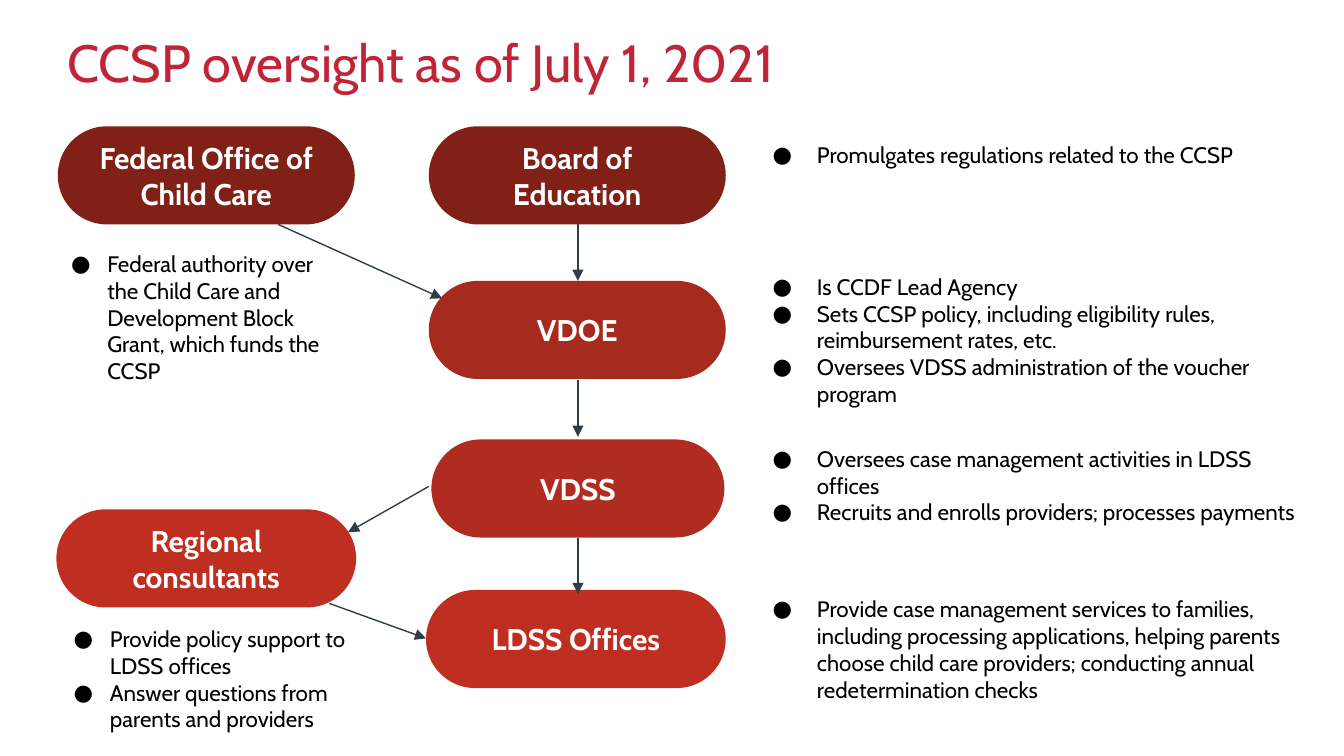
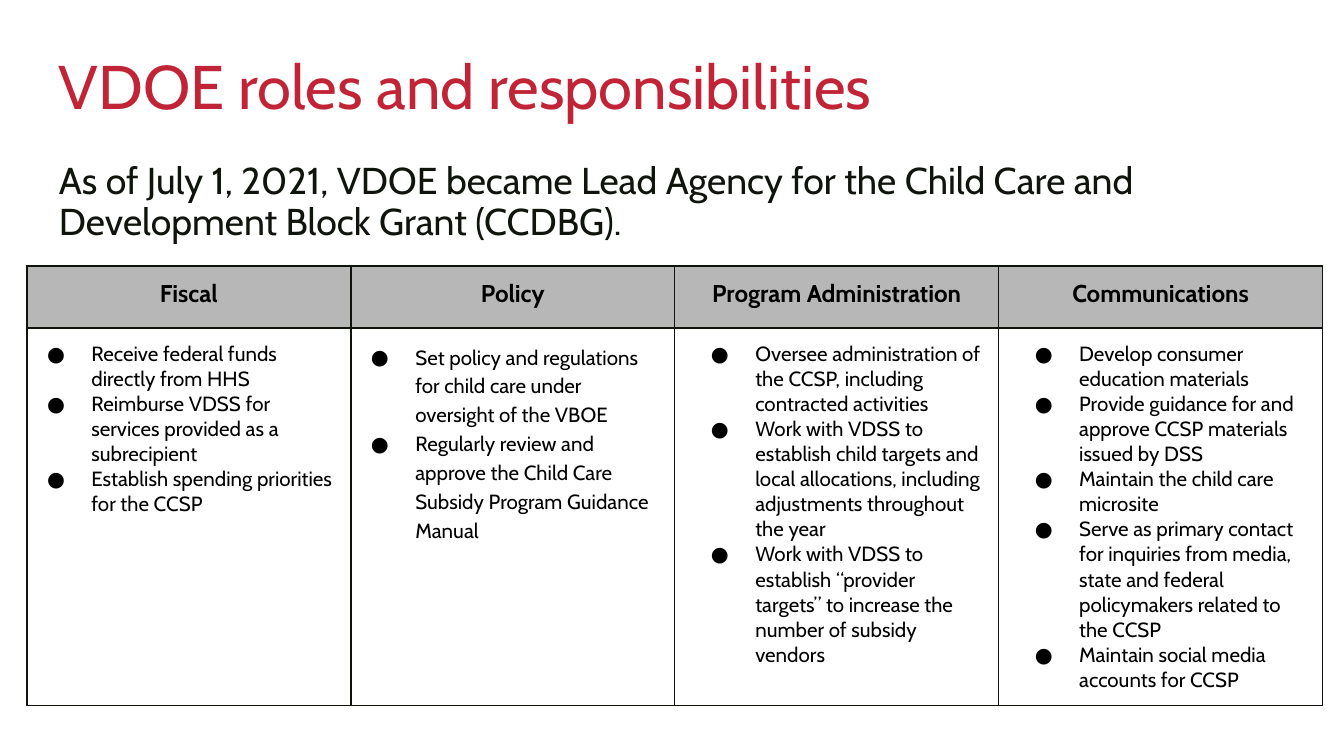
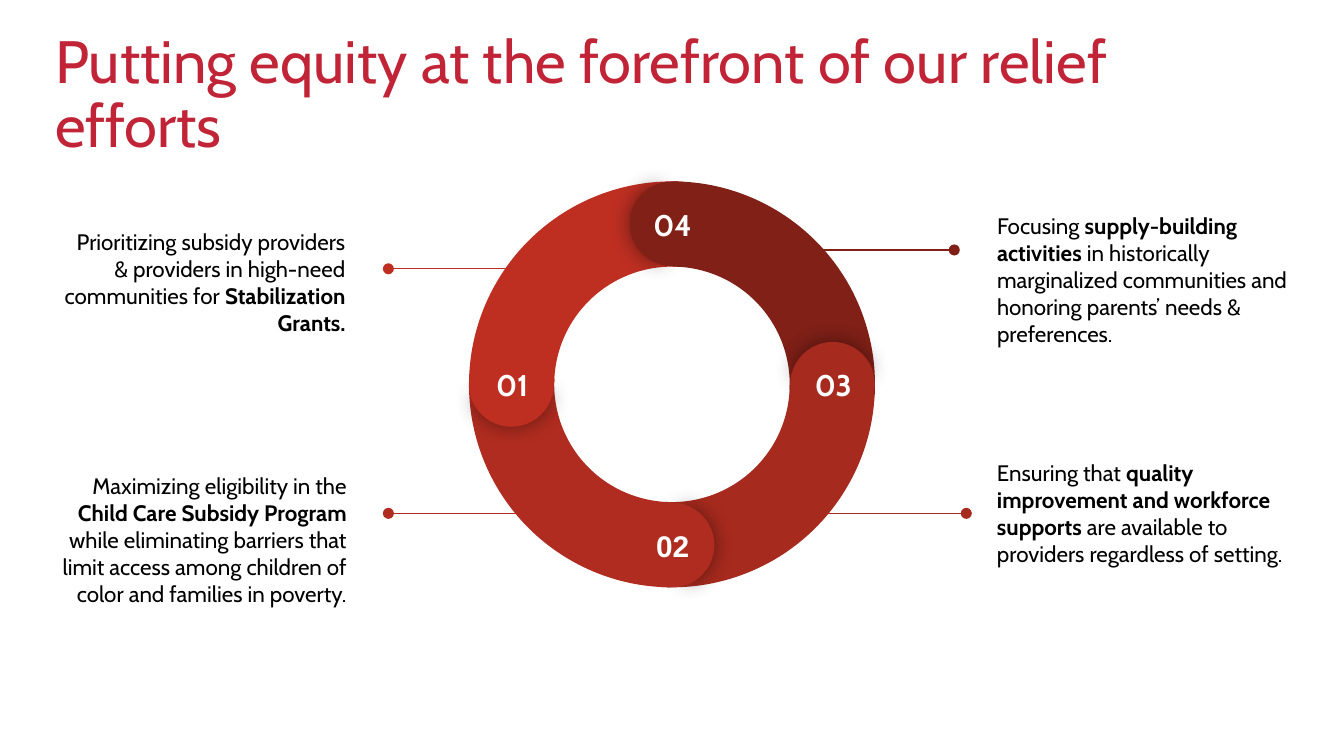
from math import cos, radians, sin

from lxml import etree
from pptx import Presentation
from pptx.dml.color import RGBColor
from pptx.enum.shapes import MSO_CONNECTOR, MSO_SHAPE
from pptx.enum.text import MSO_ANCHOR, PP_ALIGN
from pptx.oxml.ns import qn
from pptx.util import Inches, Pt

LEFT, CENTER, RIGHT = PP_ALIGN.LEFT, PP_ALIGN.CENTER, PP_ALIGN.RIGHT
TOP, MIDDLE = MSO_ANCHOR.TOP, MSO_ANCHOR.MIDDLE
ROUND_RECT, BLOCK_ARC, PIE = MSO_SHAPE.ROUNDED_RECTANGLE, MSO_SHAPE.BLOCK_ARC, MSO_SHAPE.PIE
STRAIGHT = MSO_CONNECTOR.STRAIGHT

FONT = "Cabin"
WHITE = RGBColor(0xFF, 0xFF, 0xFF)
BLACK = RGBColor(0x00, 0x00, 0x00)
INK = RGBColor(0x0F, 0x15, 0x0D)
SLATE = RGBColor(0x2F, 0x3E, 0x46)
GRAY = RGBColor(0xB7, 0xB7, 0xB7)
CRIMSON = RGBColor(0xC1, 0x24, 0x36)
MAROON = RGBColor(0x80, 0x20, 0x17)
BRICK = RGBColor(0xA7, 0x2A, 0x1E)
RUST = RGBColor(0xB0, 0x2C, 0x20)
SCARLET = RGBColor(0xBE, 0x2F, 0x22)


def add_child(parent, tag, **attributes):
    return etree.SubElement(parent, qn(tag), attributes)


def add_bullet(para, margin, hanging):
    properties = para._p.get_or_add_pPr()
    properties.set("marL", str(Inches(margin)))
    properties.set("indent", str(-Inches(hanging)))
    color = add_child(properties, "a:buClr")
    add_child(color, "a:srgbClr", val=str(BLACK))
    add_child(properties, "a:buFont", typeface=FONT)
    add_child(properties, "a:buChar", char="●")


def write(frame, paras, size, color=BLACK, bold=False, align=LEFT, bullet=None,
          spacing=None, font=FONT):
    """Fill a text frame; each para is a string or a list of (text, bold) spans."""
    frame.word_wrap = True
    for index, spans in enumerate(paras):
        para = frame.add_paragraph() if index else frame.paragraphs[0]
        if bullet:
            add_bullet(para, *bullet)
        para.alignment = align
        if spacing:
            para.line_spacing = spacing
        for text, is_bold in [(spans, bold)] if isinstance(spans, str) else spans:
            span = para.add_run()
            span.text = text
            span.font.name = font
            span.font.size = Pt(size)
            span.font.bold = is_bold
            span.font.color.rgb = color


def set_margins(holder, side, end):
    holder.margin_left = holder.margin_right = Inches(side)
    holder.margin_top = holder.margin_bottom = Inches(end)


def add_text(page, box, paras, size, anchor=TOP, margins=(0.1, 0.1), **style):
    frame = page.shapes.add_textbox(*map(Inches, box)).text_frame
    set_margins(frame, *margins)
    frame.vertical_anchor = anchor
    write(frame, paras, size, **style)


def add_title(page, box, text, size, **layout):
    add_text(page, box, [text], size, color=CRIMSON, spacing=0.9, **layout)


def add_solid(page, kind, box, fill, adjustments, rotation=0):
    shape = page.shapes.add_shape(kind, *map(Inches, box))
    shape.shadow.inherit = False
    shape.fill.solid()
    shape.fill.fore_color.rgb = fill
    shape.line.fill.background()
    for index, value in enumerate(adjustments):
        shape.adjustments[index] = value
    shape.rotation = rotation
    return shape


def add_line(page, start, end, color, tail):
    line = page.shapes.add_connector(STRAIGHT, *map(Inches, start + end))
    line.line.color.rgb = color
    line.line.width = Pt(0.75)
    properties = line._element.spPr
    add_child(properties.find(qn("a:ln")), "a:tailEnd", type=tail)
    add_child(properties, "a:effectLst")


def add_pill(page, box, text, fill):
    pill = add_solid(page, ROUND_RECT, box, fill, [0.5])
    set_margins(pill.text_frame, 0.1, 0.1)
    pill.text_frame.vertical_anchor = MIDDLE
    write(pill.text_frame, [text], 16, color=WHITE, bold=True, align=CENTER)


def build_oversight(page):
    add_title(page, (0.43, 0.15, 7.86, 0.67), "CCSP oversight as of July 1, 2021", 28,
              anchor=MIDDLE, margins=(0.07, 0.04))

    pill_height, spine = 0.73, 4.3
    for left, top, width, text, fill in [
        (3.19, 0.94, 2.21, "Board of Education", MAROON),
        (3.19, 2.09, 2.21, "VDOE", BRICK),
        (3.21, 3.27, 2.18, "VDSS", RUST),
        (3.17, 4.39, 2.23, "LDSS Offices", SCARLET),
        (0.42, 3.79, 2.23, "Regional consultants", SCARLET),
        (0.43, 0.94, 2.21, "Federal Office of Child Care", MAROON),
    ]:
        add_pill(page, (left, top, width, pill_height), text, fill)

    arrows = [((spine, top), (spine, top + 0.42)) for top in (1.67, 2.83, 4)]
    arrows += [((2.45, 4.49), (3.17, 4.75)), ((3.19, 3.62), (2.59, 3.96)),
               ((2.07, 1.67), (3.29, 2.22))]
    for start, end in arrows:
        add_line(page, start, end, SLATE, "triangle")

    wide, narrow = (0.5, 0.33), (0.38, 0.27)
    for left, top, width, bullet, duties in [
        (5.48, 0.95, 3.81, wide, ["Promulgates regulations related to the CCSP"]),
        (5.48, 1.93, 4.41, wide, [
            "Is CCDF Lead Agency",
            "Sets CCSP policy, including eligibility rules, reimbursement rates, etc.",
            "Oversees VDSS administration of the voucher program"]),
        (5.48, 3.21, 4.41, wide, [
            "Oversees case management activities in LDSS offices",
            "Recruits and enrolls providers; processes payments"]),
        (5.48, 4.33, 4.41, wide, [
            "Provide case management services to families, including processing "
            "applications, helping parents choose child care providers; conducting "
            "annual redetermination checks"]),
        (0.32, 1.76, 2.21, narrow, [
            "Federal authority over the Child Care and Development Block Grant, "
            "which funds the CCSP"]),
        (0.34, 4.55, 2.67, narrow, [
            "Provide policy support to LDSS offices",
            "Answer questions from parents and providers"]),
    ]:
        add_text(page, (left, top, width, 0.64), duties, 12, bullet=bullet)


def set_borders(cell):
    properties = cell._tc.get_or_add_tcPr()
    for index, side in enumerate(("a:lnL", "a:lnR", "a:lnT", "a:lnB")):
        border = etree.Element(qn(side), w=str(Pt(1)))
        add_child(add_child(border, "a:solidFill"), "a:srgbClr", val=str(INK))
        properties.insert(index, border)


def add_roles_table(page, left, top, column_width, row_heights, columns):
    """Each column is (heading, bullet margin, line spacing, roles)."""
    table = page.shapes.add_table(
        2, len(columns), Inches(left), Inches(top),
        Inches(column_width * len(columns)), Inches(sum(row_heights))).table
    table.first_row = table.horz_banding = False
    for row, height in zip(table.rows, row_heights):
        row.height = Inches(height)
    for index, (heading, margin, spacing, roles) in enumerate(columns):
        table.columns[index].width = Inches(column_width)
        header, body = table.cell(0, index), table.cell(1, index)
        header.fill.solid()
        header.fill.fore_color.rgb = GRAY
        body.fill.background()
        for cell in (header, body):
            set_margins(cell, 0.1, 0.1)
            set_borders(cell)
        write(header.text_frame, [heading], 13, bold=True, align=CENTER)
        write(body.text_frame, roles, 11, bullet=(margin, 0.33), spacing=spacing)


def build_roles(page):
    add_title(page, (0.34, 0.32, 9.32, 0.63), "VDOE roles and responsibilities", 33)
    add_text(page, (0.34, 1.11, 9.32, 0.98), [
        "As of July 1, 2021, VDOE became Lead Agency for the Child Care and "
        "Development Block Grant (CCDBG)."], 20, color=INK, spacing=0.9)
    add_roles_table(page, 0.2, 1.98, 2.41, (0.46, 2.81), [
        ("Fiscal", 0.38, None, [
            "Receive federal funds directly from HHS",
            "Reimburse VDSS for services provided as a subrecipient",
            "Establish spending priorities for the CCSP"]),
        ("Policy", 0.38, 1.15, [
            "Set policy and regulations for child care under oversight of the VBOE",
            "Regularly review and approve the Child Care Subsidy Program Guidance Manual"]),
        ("Program Administration", 0.5, None, [
            "Oversee administration of the CCSP, including contracted activities",
            "Work with VDSS to establish child targets and local allocations, "
            "including adjustments throughout the year",
            "Work with VDSS to establish “provider targets” to increase the number "
            "of subsidy vendors"]),
        ("Communications", 0.5, None, [
            "Develop consumer education materials",
            "Provide guidance for and approve CCSP materials issued by DSS",
            "Maintain the child care microsite",
            "Serve as primary contact for inquiries from media, state and federal "
            "policymakers related to the CCSP",
            "Maintain social media accounts for CCSP"]),
    ])


def add_glow(shape):
    """Give the shape a soft dark shadow on all sides."""
    effects = shape._element.spPr.find(qn("a:effectLst"))
    shadow = add_child(effects, "a:outerShdw", blurRad=str(Pt(11.2)), dist="0", dir="0",
                       algn="ctr", rotWithShape="0")
    color = add_child(shadow, "a:srgbClr", val=str(BLACK))
    add_child(color, "a:alpha", val="43000")


def add_ring(page, left, top, size, quarters):
    """Each quarter is (number, angle of its rounded cap, fill, font)."""
    band = 0.63
    middle_radius = (size - band) / 2
    for _, angle, fill, _ in quarters:
        add_solid(page, BLOCK_ARC, (left, top, size, size), fill,
                  (126.22, 181.77, 0.21), (angle + 150) % 360)
    for number, angle, fill, font in quarters:
        center_x = left + size / 2 + middle_radius * cos(radians(angle))
        center_y = top + size / 2 + middle_radius * sin(radians(angle))
        cap = (center_x - band / 2, center_y - band / 2, band, band)
        add_glow(add_solid(page, PIE, cap, fill, (61.9, 149.96), (angle + 90.7) % 360))
        add_solid(page, PIE, cap, fill, (40.28, 171.84), (angle + 270) % 360)
        add_text(page, (center_x - 0.27, center_y - 0.23, 0.55, 0.29), [number], 16,
                 color=WHITE, bold=True, align=CENTER, font=font)


def build_equity(page):
    add_title(page, (0.34, 0.4, 9.2, 0.63),
              "Putting equity at the forefront of our relief efforts", 32,
              anchor=MIDDLE, margins=(0.07, 0.04))
    add_ring(page, 3.49, 1.35, 3.02, [
        ("03", 0, BRICK, FONT),
        ("02", 90, RUST, "Arial"),
        ("01", 180, SCARLET, FONT),
        ("04", 270, MAROON, FONT),
    ])
    for box, align, line_from, line_to, line_y, color, spans in [
        ((0.35, 1.28, 2.32, 1.64), RIGHT, 4.03, 2.89, 2, SCARLET, [
            ("Prioritizing subsidy providers & providers in high-need communities for ",
             False),
            ("Stabilization Grants.", True)]),
        ((0.26, 3.01, 2.42, 2.01), RIGHT, 4.32, 2.89, 3.82, RUST, [
            ("Maximizing eligibility in the ", False),
            ("Child Care Subsidy Program ", True),
            ("while eliminating barriers that limit access among children of color "
             "and families in poverty.", False)]),
        ((7.32, 1.26, 2.58, 1.64), LEFT, 5.7, 7.1, 1.86, MAROON, [
            ("Focusing ", False),
            ("supply-building activities", True),
            (" in historically marginalized communities and honoring parents’ needs "
             "& preferences.", False)]),
        ((7.32, 3.09, 2.44, 1.45), LEFT, 5.78, 7.19, 3.82, BRICK, [
            ("Ensuring that", False),
            (" quality improvement and workforce supports ", True),
            ("are available to providers regardless of setting.", False)]),
    ]:
        add_text(page, box, [spans], 12, anchor=MIDDLE, align=align)
        add_line(page, (line_from, line_y), (line_to, line_y), color, "oval")


def main():
    deck = Presentation()
    deck.slide_width = Inches(10)
    deck.slide_height = deck.slide_width * 9 // 16
    blank = deck.slide_layouts[6]
    for build in (build_oversight, build_roles, build_equity):
        build(deck.slides.add_slide(blank))
    deck.save("out.pptx")


if __name__ == "__main__":
    main()
